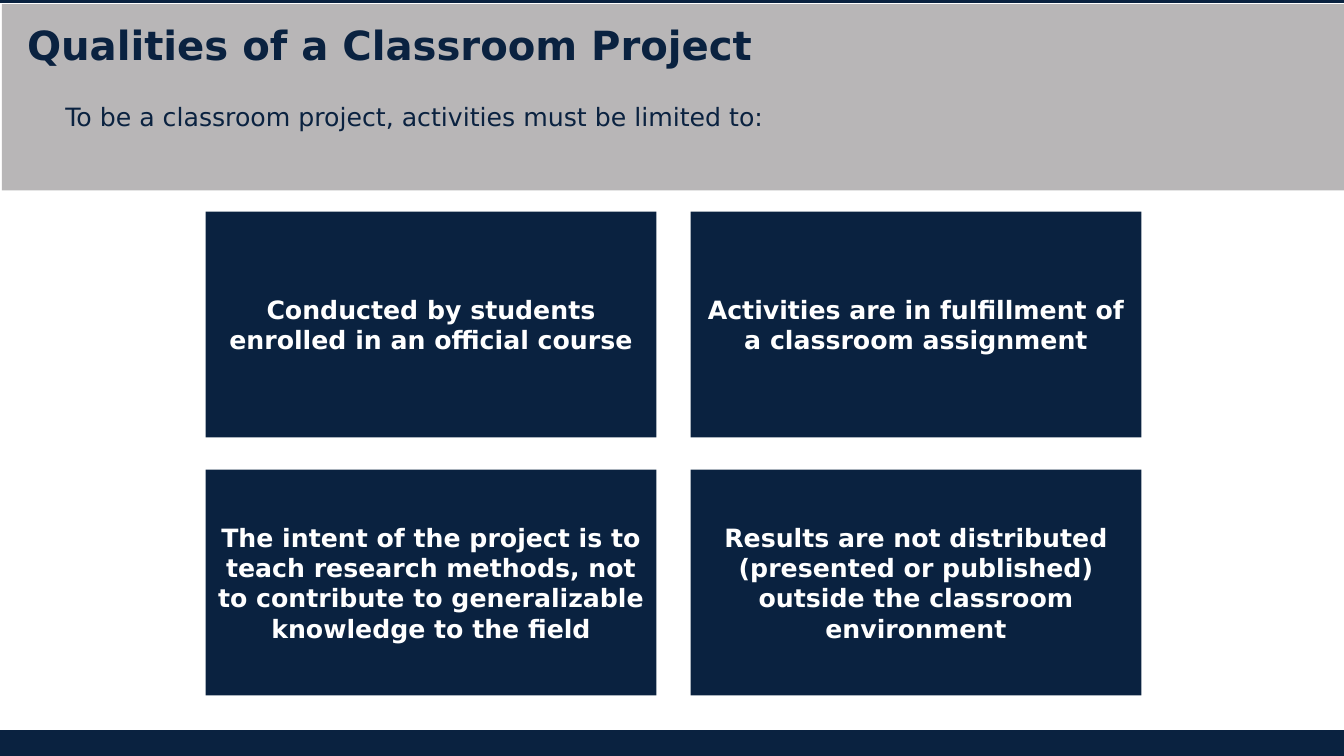
from pptx import Presentation
from pptx.dml.color import RGBColor
from pptx.enum.shapes import MSO_SHAPE
from pptx.enum.text import MSO_ANCHOR, PP_ALIGN
from pptx.util import Inches, Pt

RECTANGLE = MSO_SHAPE.RECTANGLE
MIDDLE, TOP = MSO_ANCHOR.MIDDLE, MSO_ANCHOR.TOP
CENTER, LEFT = PP_ALIGN.CENTER, PP_ALIGN.LEFT

NAVY = RGBColor(0x0A, 0x22, 0x40)
GRAY = RGBColor(0xB8, 0xB6, 0xB7)
WHITE = RGBColor(0xFF, 0xFF, 0xFF)
FONT = "DejaVu Sans"

presentation = Presentation()
presentation.slide_width = Inches(13.33)
presentation.slide_height = Inches(7.5)
slide = presentation.slides.add_slide(presentation.slide_layouts[6])


def add_rectangle(left, top, width, height, fill, outline=None):
    shape = slide.shapes.add_shape(
        RECTANGLE, Inches(left), Inches(top), Inches(width), Inches(height))
    shape.shadow.inherit = False
    shape.fill.solid()
    shape.fill.fore_color.rgb = fill
    if outline is None:
        shape.line.fill.background()
    else:
        shape.line.color.rgb = outline
        shape.line.width = Pt(4.5)
    return shape


def write_text(shape, text, size, color, bold, alignment, anchor):
    frame = shape.text_frame
    frame.word_wrap = True
    frame.vertical_anchor = anchor
    paragraph = frame.paragraphs[0]
    paragraph.alignment = alignment
    run = paragraph.add_run()
    run.text = text
    run.font.name = FONT
    run.font.size = Pt(size)
    run.font.bold = bold
    run.font.color.rgb = color


# Page frame, footer band and header band
add_rectangle(-0.03, 0, 13.41, 7.28, WHITE, NAVY)
add_rectangle(-0.03, 7.27, 13.41, 0.28, NAVY, NAVY)
add_rectangle(0.02, 0.04, 13.33, 1.85, GRAY)

# Title and lead-in
title = slide.shapes.add_textbox(
    Inches(0.17), Inches(0.15), Inches(10.4), Inches(0.58))
write_text(title, "Qualities of a Classroom Project", 28.7, NAVY, True, LEFT, TOP)
lead_in = slide.shapes.add_textbox(
    Inches(0.55), Inches(0.96), Inches(12.24), Inches(0.4))
write_text(lead_in, "To be a classroom project, activities must be limited to:",
           18, NAVY, False, LEFT, TOP)

# Two-by-two grid of qualities
GRID_LEFT, GRID_TOP = 2.04, 2.1
CARD_WIDTH, CARD_HEIGHT = 4.47, 2.24
COLUMN_GAP, ROW_GAP = 0.34, 0.32
qualities = [
    ["Conducted by students enrolled in an official course",
     "Activities are in fulfillment of a classroom assignment"],
    ["The intent of the project is to teach research methods, not to "
     "contribute to generalizable knowledge to the field",
     "Results are not distributed (presented or published) outside the "
     "classroom environment"],
]
for row, row_qualities in enumerate(qualities):
    for column, quality in enumerate(row_qualities):
        card = add_rectangle(GRID_LEFT + column * (CARD_WIDTH + COLUMN_GAP),
                             GRID_TOP + row * (CARD_HEIGHT + ROW_GAP),
                             CARD_WIDTH, CARD_HEIGHT, NAVY)
        write_text(card, quality, 18, WHITE, True, CENTER, MIDDLE)

presentation.save("out.pptx")
